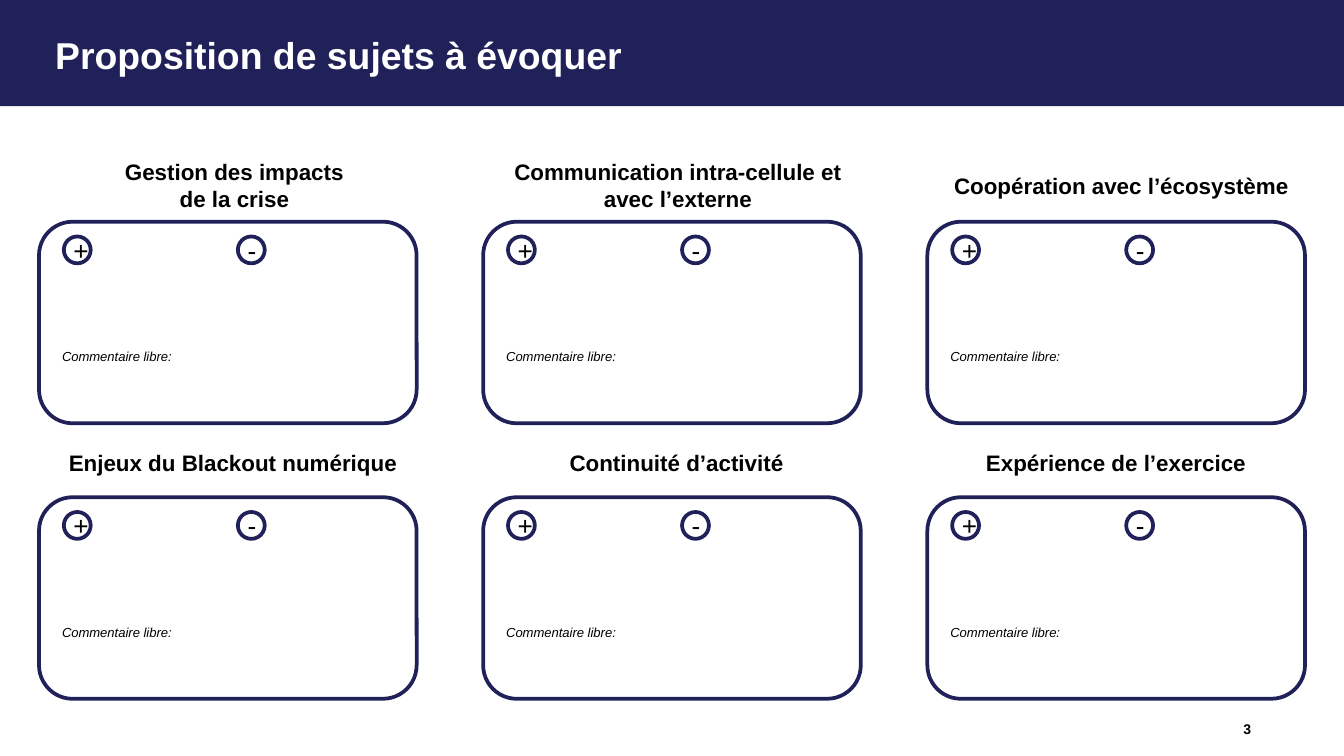
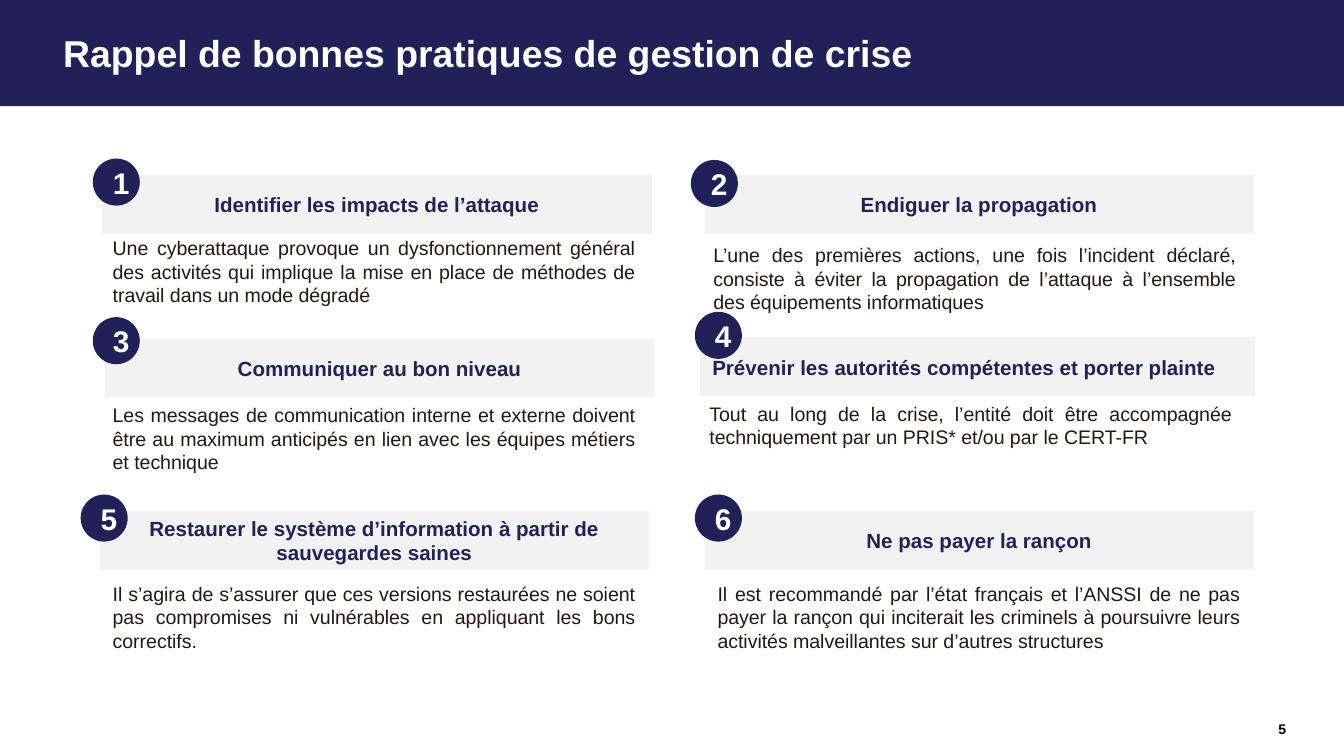
import dataclasses

import pptx
import pptx.dml.color
import pptx.enum.shapes
import pptx.enum.text
import pptx.util

RGBColor = pptx.dml.color.RGBColor
NAVY = RGBColor(0x21, 0x21, 0x5A)
WHITE = RGBColor(0xFF, 0xFF, 0xFF)
BLACK = RGBColor(0, 0, 0)
PALE_GREY = RGBColor(0xF2, 0xF2, 0xF2)
BROWN = RGBColor(0x24, 0x18, 0x10)

KIND = pptx.enum.shapes.MSO_SHAPE
ALIGN = pptx.enum.text.PP_ALIGN
ANCHOR = pptx.enum.text.MSO_ANCHOR
FONT = "Arial"

# Square grid: 100 columns across the slide, 56.25 rows down
SLIDE_WIDTH = pptx.util.Inches(10)
CELL = SLIDE_WIDTH / 100
COLUMNS, ROWS = 100, 56.25
INSETS = (1, 0.5, 1, 0.5)

# Cards of the first slide
CARD_LEFT, CARD_PITCH = 2.9, 33.05
CARD_WIDTH, CARD_HEIGHT = 28.1, 15
CARD_TOPS = (16.5, 37)
LABEL_ROWS = ((10.8, 6), (31.7, 5.5))
SIGNS = (("+", 1.85), ("-", 14.8))
SIGN_SIZE = 2
# Each label: text, left, width
SUBJECTS = (
    (("Gestion des impacts\vde la crise", 2.9, 28.1),
     ("Communication intra-cellule et avec l’externe", 35.9, 28.1),
     ("Coopération avec l’écosystème", 66.4, 33.1)),
    (("Enjeux du Blackout numérique", 2.8, 28.1),
     ("Continuité d’activité", 35.8, 28.1),
     ("Expérience de l’exercice", 68.5, 28.1)),
)

# Practices of the second slide
BANNER_HEIGHT, ADVICE_WIDTH, BADGE_SIZE = 4.4, 40.9, 3.5


@dataclasses.dataclass
class Practice:
    heading: str
    advice: str
    banner_at: tuple
    advice_at: tuple
    badge_at: tuple
    banner_width: float = 40.9
    heading_align: int = ALIGN.CENTER
    advice_height: float = 6.3


PRACTICES = (
    Practice("Identifier les impacts de l’attaque",
             "Une cyberattaque provoque un dysfonctionnement général des "
             "activités qui implique la mise en place de méthodes de travail "
             "dans un mode dégradé",
             (7.6, 13), (7.4, 17.1), (6.9, 11.8)),
    Practice("Endiguer la propagation",
             "L’une des premières actions, une fois l’incident déclaré, "
             "consiste à éviter la propagation de l’attaque à l’ensemble des "
             "équipements informatiques",
             (52.4, 13), (52.1, 17.6), (51.4, 11.9)),
    Practice("Communiquer au bon niveau",
             "Les messages de communication interne et externe doivent être "
             "au maximum anticipés en lien avec les équipes métiers et "
             "technique",
             (7.8, 25.2), (7.4, 29.5), (6.9, 23.6)),
    Practice("Prévenir les autorités compétentes et porter plainte",
             "Tout au long de la crise, l’entité doit être accompagnée "
             "techniquement par un PRIS* et/ou par le CERT-FR",
             (52.1, 25.1), (51.8, 29.4), (51.7, 23.2),
             41.3, ALIGN.JUSTIFY, 4.5),
    Practice("Restaurer le système d’information à partir de sauvegardes "
             "saines",
             "Il s’agira de s’assurer que ces versions restaurées ne soient "
             "pas compromises ni vulnérables en appliquant les bons "
             "correctifs.",
             (7.4, 38), (7.4, 42.8), (6, 36.8)),
    Practice("Ne pas payer la rançon",
             "Il est recommandé par l’état français et l’ANSSI de ne pas "
             "payer la rançon qui inciterait les criminels à poursuivre leurs "
             "activités malveillantes sur d’autres structures",
             (52.4, 38), (52.4, 42.8), (51.7, 36.8)),
)


def grid(*cells):
    return [round(count * CELL) for count in cells]


def write(holder, text, size=12, color=BLACK, bold=False, italic=False,
          align=ALIGN.LEFT, anchor=ANCHOR.MIDDLE, insets=INSETS,
          line_spacing=None, grow=False):
    """Fill a shape or text box with one formatted paragraph."""
    frame = holder.text_frame
    frame.word_wrap = True
    frame.vertical_anchor = anchor
    (frame.margin_left, frame.margin_top,
     frame.margin_right, frame.margin_bottom) = grid(*insets)
    if grow:
        frame.auto_size = pptx.enum.text.MSO_AUTO_SIZE.SHAPE_TO_FIT_TEXT
    paragraph = frame.paragraphs[0]
    paragraph.text = text
    paragraph.alignment = align
    if line_spacing:
        paragraph.line_spacing = line_spacing
    for run in paragraph.runs:
        run.font.name = FONT
        run.font.size = pptx.util.Pt(size)
        run.font.bold = bold
        run.font.italic = italic
        run.font.color.rgb = color


def add_text(shapes, place, text, **text_format):
    write(shapes.add_textbox(*grid(*place)), text, **text_format)


def add_block(shapes, kind, place, fill, outline=None):
    block = shapes.add_shape(kind, *grid(*place))
    block.shadow.inherit = False
    block.fill.solid()
    block.fill.fore_color.rgb = fill
    if outline is None:
        block.line.fill.background()
    else:
        block.line.color.rgb = outline
        block.line.width = pptx.util.Pt(2)
    return block


def start_slide(deck, title, title_at, number, number_left):
    """Add a blank slide with the title band and the page number."""
    shapes = deck.slides.add_slide(deck.slide_layouts[6]).shapes
    add_block(shapes, KIND.RECTANGLE, (0, 0, COLUMNS, 7.9), NAVY)
    add_text(shapes, (*title_at, 92.1, 5.9), title, size=20, color=WHITE,
             bold=True, insets=(1.2, 0.5, 1, 0.5), line_spacing=0.9)
    add_text(shapes, (number_left, 52.3, 14.8, 3.9), number, size=7.5,
             bold=True, align=ALIGN.RIGHT, insets=(0, 0, 0, 0))
    return shapes


def add_card(shapes, left, top):
    """Group a comment card with its plus and minus signs."""
    members = shapes.add_group_shape().shapes
    card = add_block(members, KIND.ROUNDED_RECTANGLE,
                     (left, top, CARD_WIDTH, CARD_HEIGHT), WHITE, NAVY)
    write(card, "Commentaire libre:", size=7, italic=True,
          anchor=ANCHOR.TOP, insets=(1, 8.7, 1, 0.5))
    for sign, offset in SIGNS:
        circle = add_block(members, KIND.OVAL,
                           (left + offset, top + 1.1, SIGN_SIZE, SIGN_SIZE),
                           WHITE, NAVY)
        write(circle, sign, size=14, align=ALIGN.CENTER)


def add_banner(shapes, practice):
    banner = add_block(shapes, KIND.RECTANGLE,
                       (*practice.banner_at, practice.banner_width,
                        BANNER_HEIGHT), PALE_GREY)
    write(banner, practice.heading, size=11, color=NAVY, bold=True,
          align=practice.heading_align, insets=(0.9, 0.6, 0.9, 0.6))


def add_badge(shapes, place, number):
    badge = add_block(shapes, KIND.OVAL, (*place, BADGE_SIZE, BADGE_SIZE),
                      NAVY)
    write(badge, str(number), size=16, color=WHITE, bold=True,
          align=ALIGN.CENTER)


def build_subjects(deck):
    shapes = start_slide(deck, "Proposition de sujets à évoquer",
                         (2.9, 1.3), "3", 78.3)
    for subjects, card_top, (label_top, label_height) in zip(
            SUBJECTS, CARD_TOPS, LABEL_ROWS):
        for column, (label, left, width) in enumerate(subjects):
            add_text(shapes, (left, label_top, width, label_height), label,
                     bold=True, align=ALIGN.CENTER, insets=(1, 0, 0, 0))
            add_card(shapes, CARD_LEFT + column * CARD_PITCH, card_top)


def build_practices(deck):
    shapes = start_slide(deck, "Rappel de bonnes pratiques de gestion de crise",
                         (3.5, 1.2), "5", 80.9)
    for practice in PRACTICES:
        add_banner(shapes, practice)
        add_text(shapes, (*practice.advice_at, ADVICE_WIDTH,
                          practice.advice_height),
                 practice.advice, size=10.5, color=BROWN,
                 align=ALIGN.JUSTIFY, anchor=ANCHOR.TOP, grow=True)
    # Badges lie above banners and advice
    for number, practice in enumerate(PRACTICES, start=1):
        add_badge(shapes, practice.badge_at, number)


def main():
    deck = pptx.Presentation()
    deck.slide_width = SLIDE_WIDTH
    deck.slide_height = round(ROWS * CELL)
    build_subjects(deck)
    build_practices(deck)
    deck.save("out.pptx")


if __name__ == "__main__":
    main()
